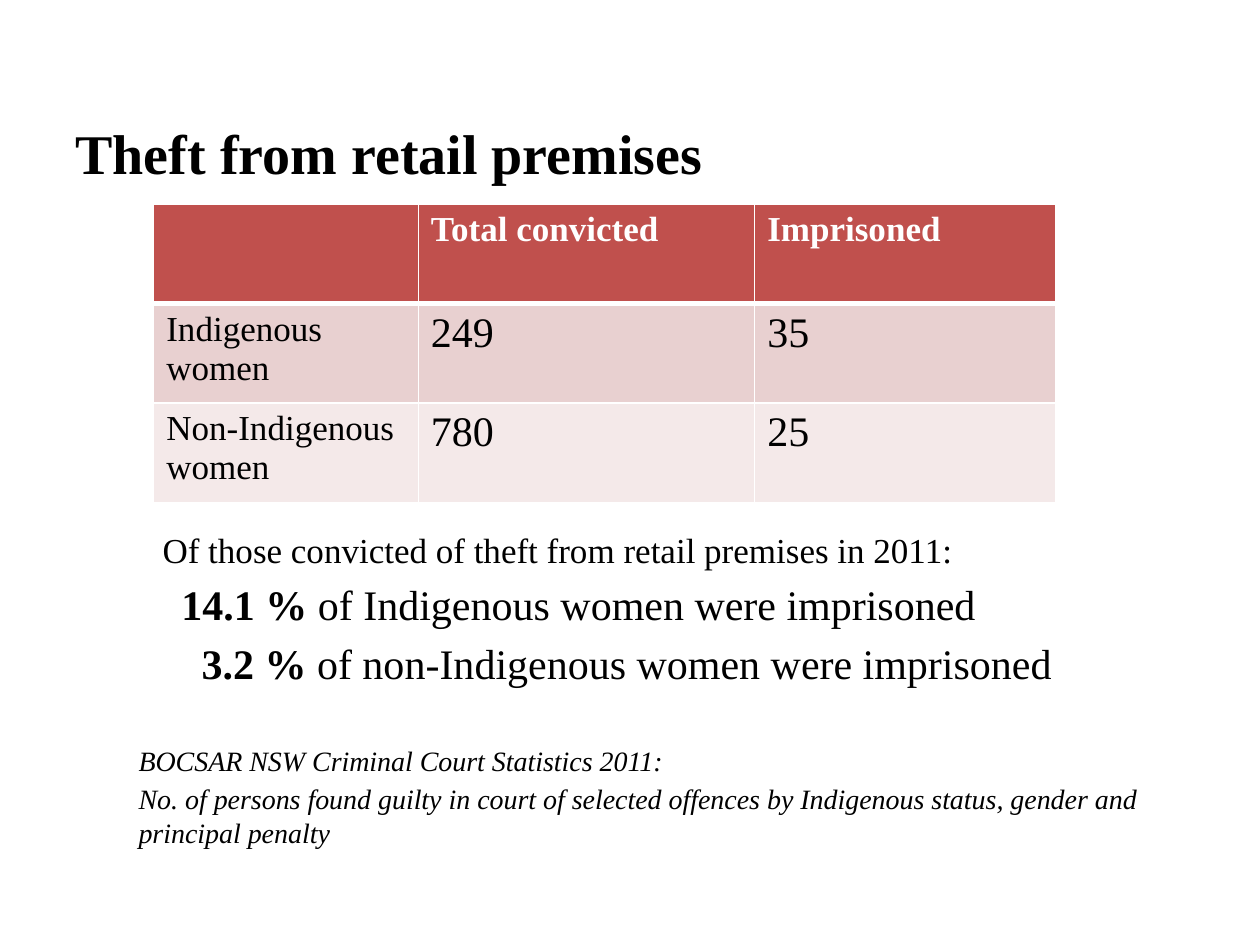
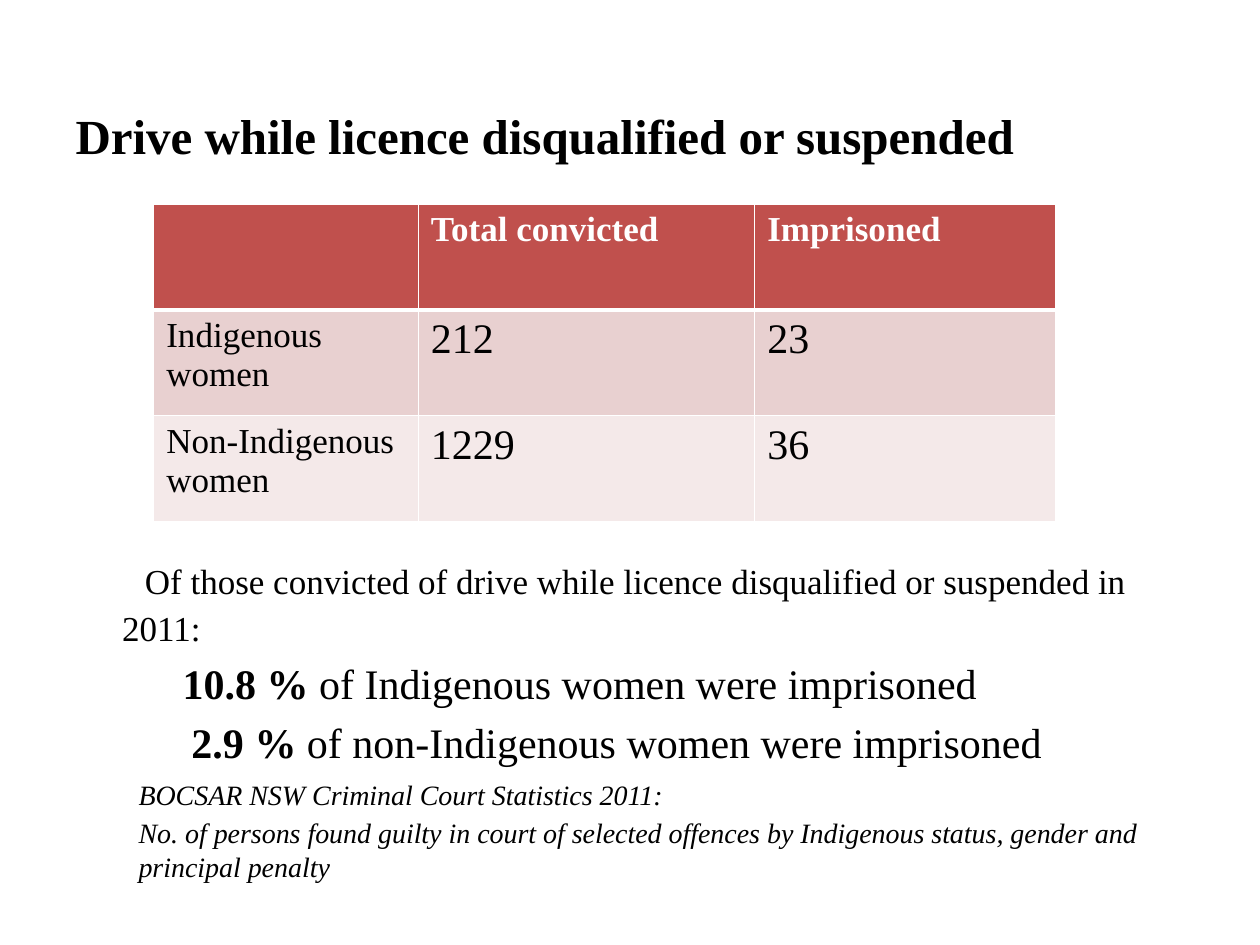
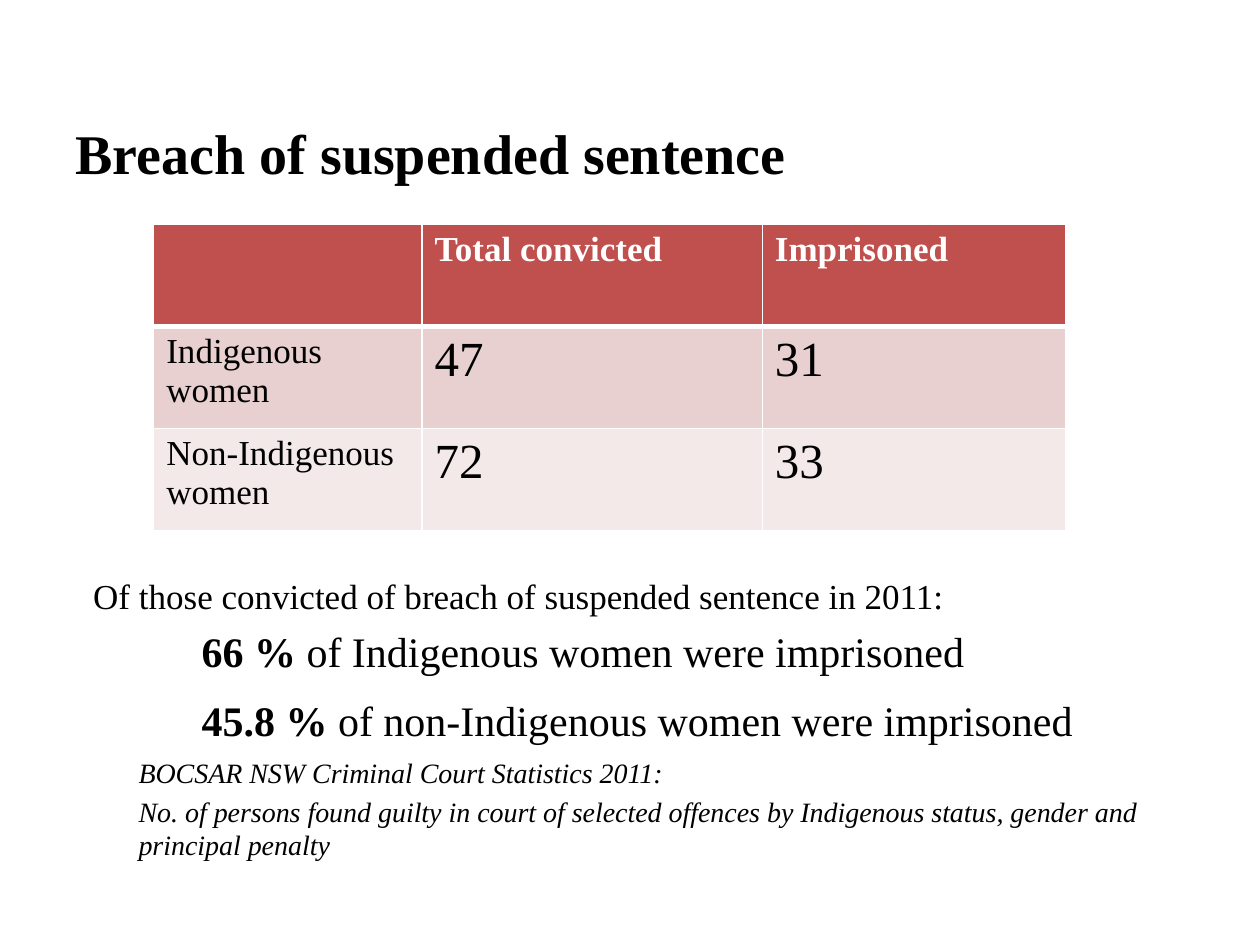
from lxml import etree
from pptx import Presentation
from pptx.dml.color import RGBColor
from pptx.oxml.ns import qn
from pptx.util import Inches, Pt

FONT = "Times New Roman"
BLACK, WHITE = "000000", "FFFFFF"
ROW_FILLS = ["C0504D", "E8D0D0", "F4E9E9"]
HEADINGS = ["", "Total convicted", "Imprisoned"]
GROUPS = ["Indigenous women", "Non-Indigenous women"]
SOURCE = [
    "BOCSAR NSW Criminal Court Statistics 2011:",
    "No. of persons found guilty in court of selected offences by "
    "Indigenous status, gender and principal penalty",
]
TABLE_LEFT = 1.22
TEXT_LEFT, TEXT_WIDTH = 0.6, 8.8
HANGING = 0.37
SOURCE_INDENT = 0.5
THIN, THICK = 1, 3

# Vertical positions and text starts are inches from the slide's edges
SLIDES = [
    dict(title="Theft from retail premises", title_size=32, title_top=0.94,
         table_top=1.62, row_height=0.79, columns=[2.1, 2.67, 2.39],
         counts=[["249", "35"], ["780", "25"]], count_size=24,
         intro="Of those convicted of theft from retail premises in 2011:",
         rates=["14.1 %", "3.2 %"], starts=[1.29, 1.44, 1.6],
         findings_top=4.15, last_gap=5.6, source_top=5.9),
    dict(title="Drive while licence disqualified or suspended", title_size=28, title_top=0.84,
         table_top=1.62, row_height=0.84, columns=[2.1, 2.67, 2.39],
         counts=[["212", "23"], ["1229", "36"]], count_size=24,
         intro="Of those convicted of drive while licence disqualified or suspended in 2011:",
         rates=["10.8 %", "2.9 %"], starts=[1.15, 1.45, 1.52],
         findings_top=4.4, last_gap=5.6, source_top=6.17),
    dict(title="Breach of suspended sentence", title_size=32, title_top=0.94,
         table_top=1.78, row_height=0.81, columns=[2.13, 2.7, 2.41],
         counts=[["47", "31"], ["72", "33"]], count_size=28,
         intro="Of those convicted of breach of suspended sentence in 2011:",
         rates=["66 %", "45.8 %"], starts=[0.74, 1.6, 1.6],
         findings_top=4.52, last_gap=11.4, source_top=6),
]


def set_font(font, size, color=BLACK, bold=False, italic=False):
    font.name, font.size = FONT, Pt(size)
    font.bold, font.italic = bold, italic
    font.color.rgb = RGBColor.from_string(color)


def add_text_frame(slide, left, top, width, height):
    text_frame = slide.shapes.add_textbox(
        Inches(left), Inches(top), Inches(width), Inches(height)).text_frame
    text_frame.word_wrap = True
    text_frame.margin_left = text_frame.margin_right = 0
    text_frame.margin_top = text_frame.margin_bottom = 0
    return text_frame


presentation = Presentation()
presentation.slide_width, presentation.slide_height = Inches(10), Inches(7.5)

for content in SLIDES:
    slide = presentation.slides.add_slide(presentation.slide_layouts[6])

    # Title
    title = add_text_frame(slide, TEXT_LEFT, content["title_top"], TEXT_WIDTH, 0.55)
    title.text = content["title"]
    set_font(title.paragraphs[0].font, content["title_size"], bold=True)

    # Table of convictions
    rows = [HEADINGS] + [[group] + counts for group, counts in zip(GROUPS, content["counts"])]
    table = slide.shapes.add_table(
        len(rows), len(HEADINGS), Inches(TABLE_LEFT), Inches(content["table_top"]),
        Inches(sum(content["columns"])), Inches(content["row_height"] * len(rows))).table
    for column, width in zip(table.columns, content["columns"]):
        column.width = Inches(width)
    for row_index, values in enumerate(rows):
        table.rows[row_index].height = Inches(content["row_height"])
        header = row_index == 0
        for column_index, value in enumerate(values):
            cell = table.cell(row_index, column_index)
            cell.text = value
            is_count = not header and column_index > 0
            set_font(cell.text_frame.paragraphs[0].font,
                     content["count_size"] if is_count else 20,
                     WHITE if header else BLACK, bold=header)
            # White borders, thick under the header
            properties = cell._tc.get_or_add_tcPr()
            for side in "LRTB":
                thick = (side, row_index) in [("B", 0), ("T", 1)]
                line = etree.SubElement(properties, qn("a:ln" + side),
                                        w=str(Pt(THICK if thick else THIN)))
                line_fill = etree.SubElement(line, qn("a:solidFill"))
                etree.SubElement(line_fill, qn("a:srgbClr"), val=WHITE)
            cell.fill.solid()
            cell.fill.fore_color.rgb = RGBColor.from_string(ROW_FILLS[row_index])

    # Findings: an introduction and one rate for each group
    findings = add_text_frame(slide, TEXT_LEFT, content["findings_top"], TEXT_WIDTH, 1.4)
    first_rate, second_rate = content["rates"]
    lines = [
        ("", content["intro"], 20, 27, 0),
        (first_rate, " of Indigenous women were imprisoned", 24, 28, 5.6),
        (second_rate, " of non-Indigenous women were imprisoned", 24, 28, content["last_gap"]),
    ]
    for index, (rate, words, size, spacing, gap) in enumerate(lines):
        paragraph = findings.add_paragraph() if index else findings.paragraphs[0]
        paragraph.line_spacing, paragraph.space_before = Pt(spacing), Pt(gap)
        first_line = content["starts"][index] - TEXT_LEFT - HANGING
        paragraph_properties = paragraph._p.get_or_add_pPr()
        paragraph_properties.set("marL", str(Inches(HANGING)))
        paragraph_properties.set("indent", str(Inches(first_line)))
        set_font(paragraph.font, size)
        for text, bold in [(rate, True), (words, False)]:
            if text:
                run = paragraph.add_run()
                run.text = text
                set_font(run.font, size, bold=bold)

    # Source
    source = add_text_frame(slide, TEXT_LEFT + SOURCE_INDENT, content["source_top"],
                            TEXT_WIDTH - SOURCE_INDENT, 0.85)
    for index, text in enumerate(SOURCE):
        paragraph = source.add_paragraph() if index else source.paragraphs[0]
        paragraph.text = text
        paragraph.line_spacing = Pt(19)
        paragraph.space_before = Pt(3.2 if index else 0)
        set_font(paragraph.font, 16, italic=True)

presentation.save("out.pptx")
